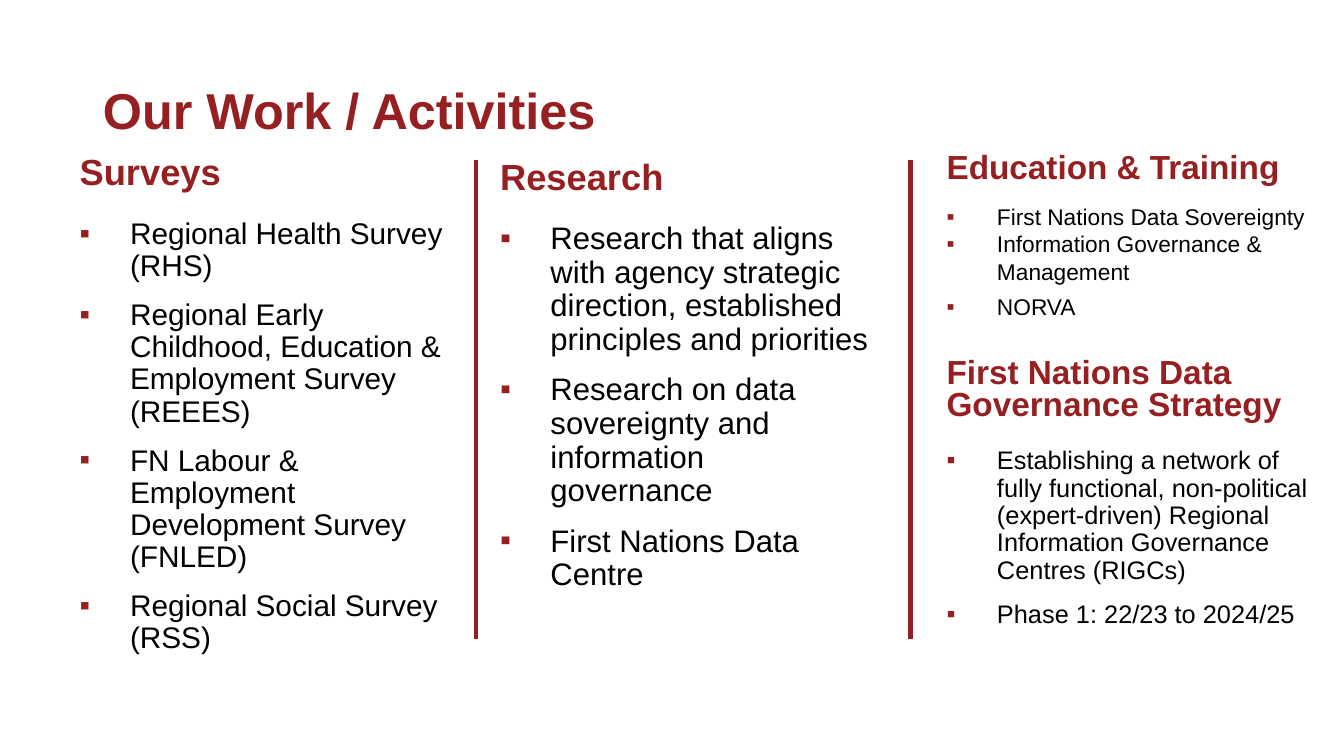
import pptx
import pptx.util
import pptx.dml.color
import pptx.enum.text
import pptx.enum.shapes
import pptx.oxml.ns
import lxml.etree

Inches = pptx.util.Inches
Pt = pptx.util.Pt
RED = pptx.dml.color.RGBColor(0x96, 0x20, 0x21)
BLACK = pptx.dml.color.RGBColor(0, 0, 0)
FONT = "Arial"

SURVEYS = [
    "Regional Health Survey (RHS)",
    "Regional Early Childhood, Education & Employment Survey (REEES)",
    "FN Labour & Employment Development Survey (FNLED)",
    "Regional Social Survey (RSS)",
]
RESEARCH = [
    "Research that aligns with agency strategic direction, established principles and priorities",
    "Research on data sovereignty and information governance",
    "First Nations Data Centre",
]
TRAINING = ["First Nations Data Sovereignty", "Information Governance & Management"]
STRATEGY = [
    "Establishing a network of fully functional, non-political (expert-driven) "
    "Regional Information Governance Centres (RIGCs)",
    "Phase 1: 22/23 to 2024/25",
]


def place(shape, left, top, width, height):
    shape.left, shape.top = Inches(left), Inches(top)
    shape.width, shape.height = Inches(width), Inches(height)
    shape.text_frame.word_wrap = True
    shape.text_frame.auto_size = pptx.enum.text.MSO_AUTO_SIZE.NONE
    return shape.text_frame


def set_bullet(para, bulleted):
    properties = para._p.get_or_add_pPr()
    properties.set("marL", str(Inches(0.5) if bulleted else 0))
    properties.set("indent", str(-Inches(0.5) if bulleted else 0))
    name = pptx.oxml.ns.qn
    if not bulleted:
        lxml.etree.SubElement(properties, name("a:buNone"))
        return
    colour = lxml.etree.SubElement(properties, name("a:buClr"))
    lxml.etree.SubElement(colour, name("a:srgbClr")).set("val", str(RED))
    lxml.etree.SubElement(properties, name("a:buFont")).set("typeface", FONT)
    lxml.etree.SubElement(properties, name("a:buChar")).set("char", "▪")


def write(frame, text, size, color=BLACK, bold=False, bulleted=False,
          spacing=0.9, before=0, after=0):
    para = frame.paragraphs[0]
    if para.runs:
        para = frame.add_paragraph()
    set_bullet(para, bulleted)
    para.alignment = pptx.enum.text.PP_ALIGN.LEFT
    para.line_spacing = spacing
    para.space_before, para.space_after = Pt(before), Pt(after)
    span = para.add_run()
    span.text = text
    span.font.name = FONT
    span.font.size = Pt(size)
    span.font.bold = bold
    span.font.color.rgb = color


def write_heading(frame, text, size, spacing, before=0):
    write(frame, text, size, color=RED, bold=True, spacing=spacing, before=before, after=12)


def write_list(frame, items, size, spacing=0.9, gap=6):
    for item in items:
        write(frame, item, size, bulleted=True, spacing=spacing, before=gap, after=gap)


def add_divider(page, left):
    line = page.shapes.add_connector(
        pptx.enum.shapes.MSO_CONNECTOR.STRAIGHT,
        Inches(left), Inches(1.59), Inches(left), Inches(6.34))
    line.line.color.rgb = RED
    line.line.width = Pt(3)
    lxml.etree.SubElement(line._element.spPr, pptx.oxml.ns.qn("a:effectLst"))


def main():
    deck = pptx.Presentation()
    deck.slide_width, deck.slide_height = Inches(13.33), Inches(7.5)
    page = deck.slides.add_slide(deck.slide_layouts.get_by_name("Two Content"))
    title, left_body, middle_body = page.placeholders

    title_frame = place(title, 0.92, 0.4, 11.5, 1.45)
    title_frame.vertical_anchor = pptx.enum.text.MSO_ANCHOR.MIDDLE
    write(title_frame, "Our Work / Activities", 36, color=RED, bold=True)

    surveys = place(left_body, 0.69, 1.48, 3.9, 5.44)
    write_heading(surveys, "Surveys", 25.9, 0.9)
    write_list(surveys, SURVEYS, 21.3)

    research = place(middle_body, 4.86, 1.48, 3.9, 5.44)
    write_heading(research, "Research", 25.9, 1)
    write_list(research, RESEARCH, 22.2)

    for left in (4.72, 9.03):
        add_divider(page, left)

    training = place(page.shapes.add_textbox(0, 0, 0, 0), 9.29, 1.48, 3.86, 5.44)
    write_heading(training, "Education & Training", 23.8, 0.8)
    write_list(training, TRAINING, 16.2, spacing=1, gap=0)
    write(training, "NORVA", 16.2, bulleted=True, spacing=1, before=6)
    write_heading(training, "First Nations Data Governance Strategy", 23.8, 0.8, before=27.5)
    write_list(training, STRATEGY, 18.1)

    deck.save("out.pptx")


if __name__ == "__main__":
    main()
